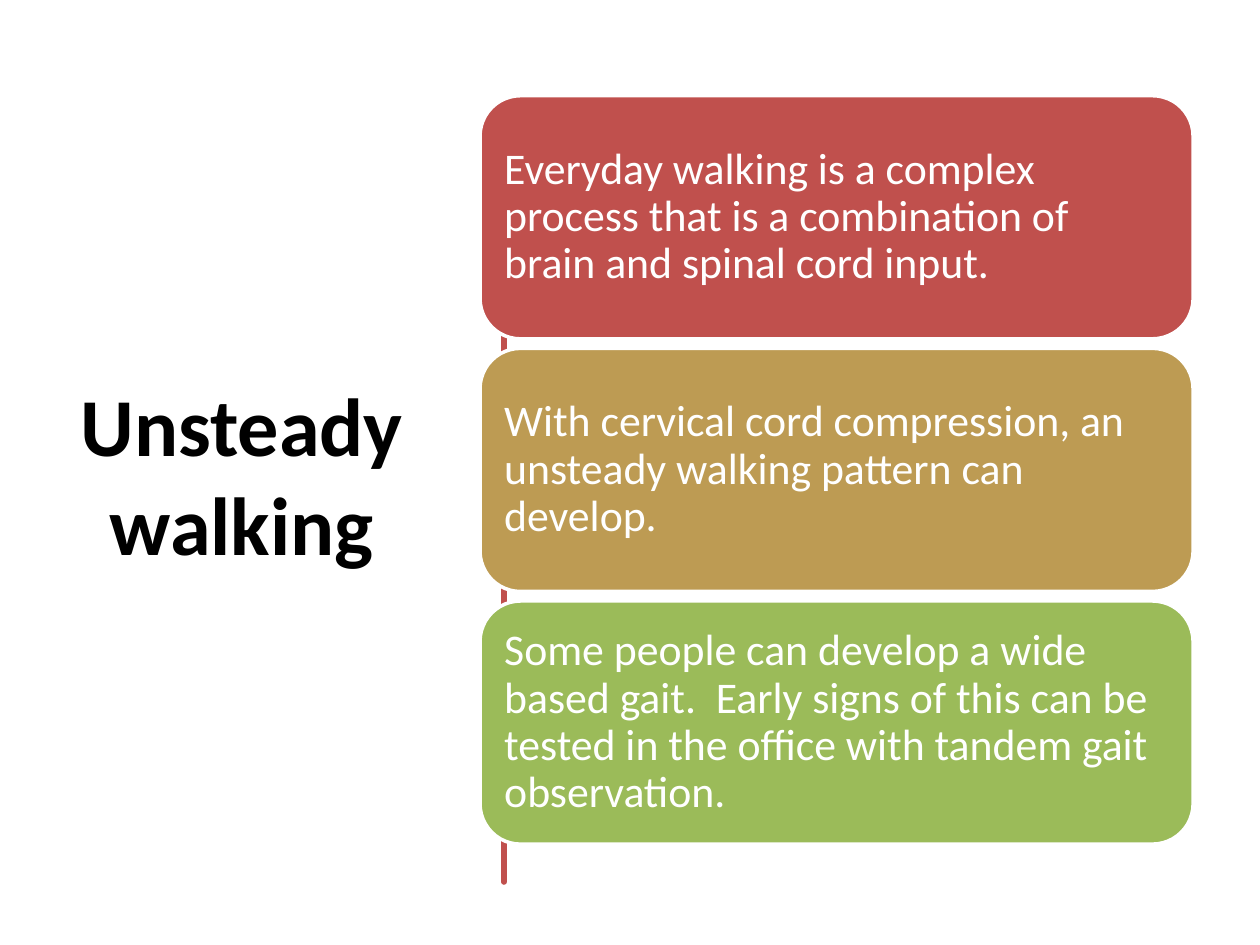
from pptx import Presentation
from pptx.dml.color import RGBColor
from pptx.enum.shapes import MSO_SHAPE
from pptx.enum.text import MSO_ANCHOR, PP_ALIGN
from pptx.util import Inches, Pt

ROUND = MSO_SHAPE.ROUNDED_RECTANGLE
MIDDLE = MSO_ANCHOR.MIDDLE
LEFT, CENTER = PP_ALIGN.LEFT, PP_ALIGN.CENTER

BLACK = RGBColor(0x00, 0x00, 0x00)
WHITE = RGBColor(0xFF, 0xFF, 0xFF)
RED = RGBColor(0xC0, 0x50, 0x4D)
GOLD = RGBColor(0xBD, 0x9B, 0x53)
GREEN = RGBColor(0x9B, 0xBB, 0x59)

FONT = "Calibri"
TOP, HEIGHT, STEP = 0.76, 1.93, 2.005

CARDS = [
    ("Everyday walking is a complex process that is a combination of "
     "brain and spinal cord input.", RED),
    ("With cervical cord compression, an unsteady walking pattern can "
     "develop.", GOLD),
    ("Some people can develop a wide based gait.  Early signs of this can be "
     "tested in the office with tandem gait observation.", GREEN),
]

# Height on the slide, then the left and right edge of the brush stroke
STROKE = [
    (0.84, 3.55, 3.56), (1.15, 3.56, 3.57), (1.8, 3.55, 3.56),
    (2.4, 3.55, 3.56), (2.6, 3.55, 3.57), (3.0, 3.55, 3.56),
    (3.4, 3.54, 3.57), (3.8, 3.54, 3.57), (4.15, 3.55, 3.57),
    (4.36, 3.54, 3.56), (4.55, 3.53, 3.54), (4.77, 3.54, 3.55),
    (5.1, 3.55, 3.56), (5.35, 3.55, 3.57), (5.6, 3.55, 3.58),
    (5.84, 3.55, 3.56), (6.2, 3.55, 3.57), (6.5, 3.55, 3.57),
    (6.76, 3.55, 3.56),
]


def style(shape, fill, line, width):
    shape.shadow.inherit = False
    shape.fill.solid()
    shape.fill.fore_color.rgb = fill
    shape.line.color.rgb = line
    shape.line.width = Pt(width)


def write(frame, text, size, color, align, bold=False):
    frame.word_wrap = True
    frame.vertical_anchor = MIDDLE
    para = frame.paragraphs[0]
    para.text = text
    para.alignment = align
    font = para.font
    font.name, font.size, font.bold = FONT, Pt(size), bold
    font.color.rgb = color
    return para


def set_title(slide, text):
    title = slide.shapes.title
    title.left, title.top = Inches(0.52), Inches(0.7)
    title.width, title.height = Inches(2.8), Inches(6.11)
    write(title.text_frame, text, 47, BLACK, CENTER, bold=True)


def add_stroke(slide):
    """Draw the uneven upright line down one edge and back up the other."""
    edge = [(right, y) for y, _, right in STROKE]
    edge += [(left, y) for y, left, _ in reversed(STROKE)]
    pen = slide.shapes.build_freeform(*edge[0], scale=Inches(1))
    pen.add_line_segments(edge[1:], close=True)
    style(pen.convert_to_shape(), RED, RED, 3.25)


def add_card(slide, top, text, color):
    card = slide.shapes.add_shape(
        ROUND, Inches(3.81), Inches(top), Inches(5.66), Inches(HEIGHT))
    style(card, color, WHITE, 2)
    frame = card.text_frame
    frame.margin_left = frame.margin_right = Inches(0.1)
    frame.margin_top = frame.margin_bottom = Inches(0.1)
    para = write(frame, text, 25, WHITE, LEFT)
    para.line_spacing = 0.9


def main():
    deck = Presentation()
    deck.slide_width, deck.slide_height = Inches(10), Inches(7.5)
    slide = deck.slides.add_slide(deck.slide_layouts[5])
    set_title(slide, "Unsteady walking")
    add_stroke(slide)
    for row, (text, color) in enumerate(CARDS):
        add_card(slide, TOP + row * STEP, text, color)
    deck.save("out.pptx")


if __name__ == "__main__":
    main()
